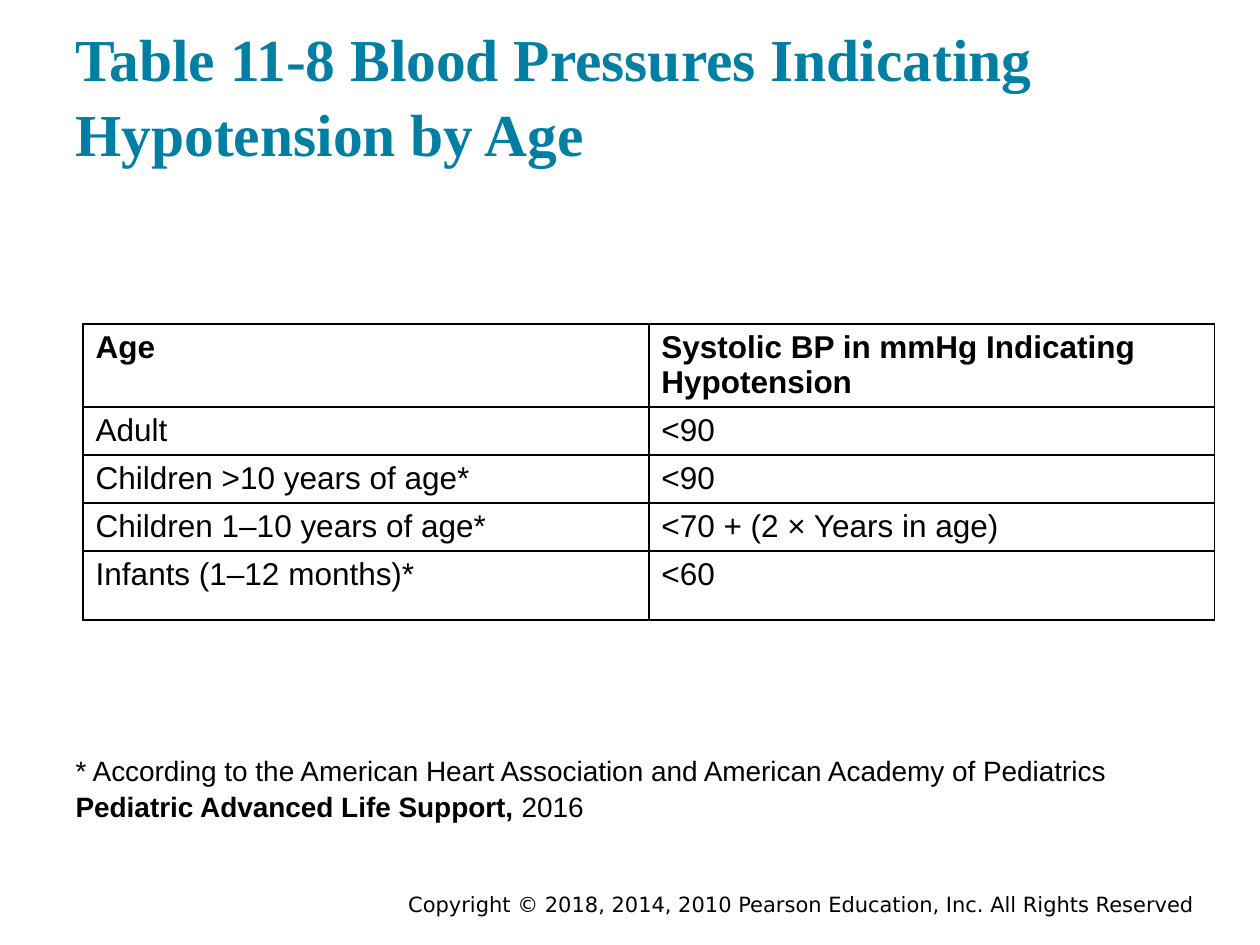
import pptx
import pptx.util
import pptx.dml.color
import pptx.enum.text
from lxml import etree
from pptx.oxml.ns import qn

Inches = pptx.util.Inches
Pt = pptx.util.Pt
Align = pptx.enum.text.PP_ALIGN
Anchor = pptx.enum.text.MSO_ANCHOR

COLORS = {"title": "007FA3", "text": "000000", "line": "000000"}
PRESSURES = [
    ("Age", "Systolic BP in mmHg Indicating Hypotension"),
    ("Adult", "<90"),
    ("Children >10 years of age*", "<90"),
    ("Children 1–10 years of age*", "<70 + (2 × Years in age)"),
    ("Infants (1–12 months)*", "<60"),
]
ROW_HEIGHTS = [0.66, 0.38, 0.38, 0.38, 0.55]


def format_font(font, name, size, color="text", bold=False):
    font.name = name
    font.size = Pt(size)
    font.bold = bold
    font.color.rgb = pptx.dml.color.RGBColor.from_string(COLORS[color])


def place(shape, left, top, width, height, anchor):
    """Set a text shape's box, insets, anchor and wrapping."""
    shape.left, shape.top = Inches(left), Inches(top)
    shape.width, shape.height = Inches(width), Inches(height)
    frame = shape.text_frame
    frame.word_wrap = True
    frame.auto_size = pptx.enum.text.MSO_AUTO_SIZE.NONE
    frame.vertical_anchor = anchor
    frame.margin_left = frame.margin_right = Inches(0.1)
    frame.margin_top = frame.margin_bottom = Inches(0.1)


def fill_title(title, left, top, width, height):
    place(title, left, top, width, height, Anchor.BOTTOM)
    title.text_frame.text = "Table 11-8 Blood Pressures Indicating Hypotension by Age"
    para = title.text_frame.paragraphs[0]
    para.alignment = Align.LEFT
    para.line_spacing = 1.05
    format_font(para.runs[0].font, "Times New Roman", 34, "title", True)


def outline_cell(cell, width):
    """Draw the four borders, which must come before the fill in the cell."""
    properties = cell._tc.get_or_add_tcPr()
    for position, side in enumerate(("a:lnL", "a:lnR", "a:lnT", "a:lnB")):
        line = etree.Element(qn(side), w=str(Pt(width)))
        fill = etree.SubElement(line, qn("a:solidFill"))
        etree.SubElement(fill, qn("a:srgbClr"), val=COLORS["line"])
        properties.insert(position, line)


def add_pressure_table(page, left, top, width):
    columns = len(PRESSURES[0])
    frame = page.shapes.add_table(
        len(PRESSURES), columns, Inches(left), Inches(top),
        Inches(width), Inches(sum(ROW_HEIGHTS)))
    table = frame.table
    table.first_row = table.horz_banding = False
    for column in table.columns:
        column.width = Inches(width / columns)
    for row_index, (row, texts) in enumerate(zip(table.rows, PRESSURES)):
        row.height = Inches(ROW_HEIGHTS[row_index])
        for cell, text in zip(row.cells, texts):
            cell.text = text
            cell.fill.background()
            outline_cell(cell, 1)
            span = cell.text_frame.paragraphs[0].runs[0]
            format_font(span.font, "Arial", 18, bold=row_index == 0)


def fill_footnote(body, left, top, width, height):
    place(body, left, top, width, height, Anchor.TOP)
    para = body.text_frame.paragraphs[0]
    properties = para._p.get_or_add_pPr()
    properties.set("marL", "0")
    properties.set("indent", "0")
    etree.SubElement(properties, qn("a:buNone"))
    para.space_before = Pt(0)
    para.line_spacing = 1.05
    for text, bold in (
        ("* According to the American Heart Association and "
         "American Academy of Pediatrics ", False),
        ("Pediatric Advanced Life Support, ", True),
        ("2016", False),
    ):
        span = para.add_run()
        span.text = text
        format_font(span.font, "Arial", 16, bold=bold)


def add_copyright(page, left, top, width, height):
    box = page.shapes.add_textbox(0, 0, 0, 0)
    place(box, left, top, width, height, Anchor.MIDDLE)
    box.text_frame.margin_top = box.text_frame.margin_bottom = 0
    box.text_frame.text = "Copyright © 2018, 2014, 2010 Pearson Education, Inc. All Rights Reserved"
    para = box.text_frame.paragraphs[0]
    para.alignment = Align.RIGHT
    format_font(para.runs[0].font, "DejaVu Sans", 12)


def main():
    deck = pptx.Presentation()
    deck.slide_width, deck.slide_height = Inches(10), Inches(7.5)
    page = deck.slides.add_slide(deck.slide_layouts[1])
    fill_title(page.shapes.title, 0.5, 0.24, 9, 1.2)
    add_pressure_table(page, 0.66, 2.57, 8.98)
    fill_footnote(page.placeholders[1], 0.5, 5.87, 9, 0.67)
    add_copyright(page, 2.92, 7.05, 6.66, 0.25)
    deck.save("out.pptx")


if __name__ == "__main__":
    main()
